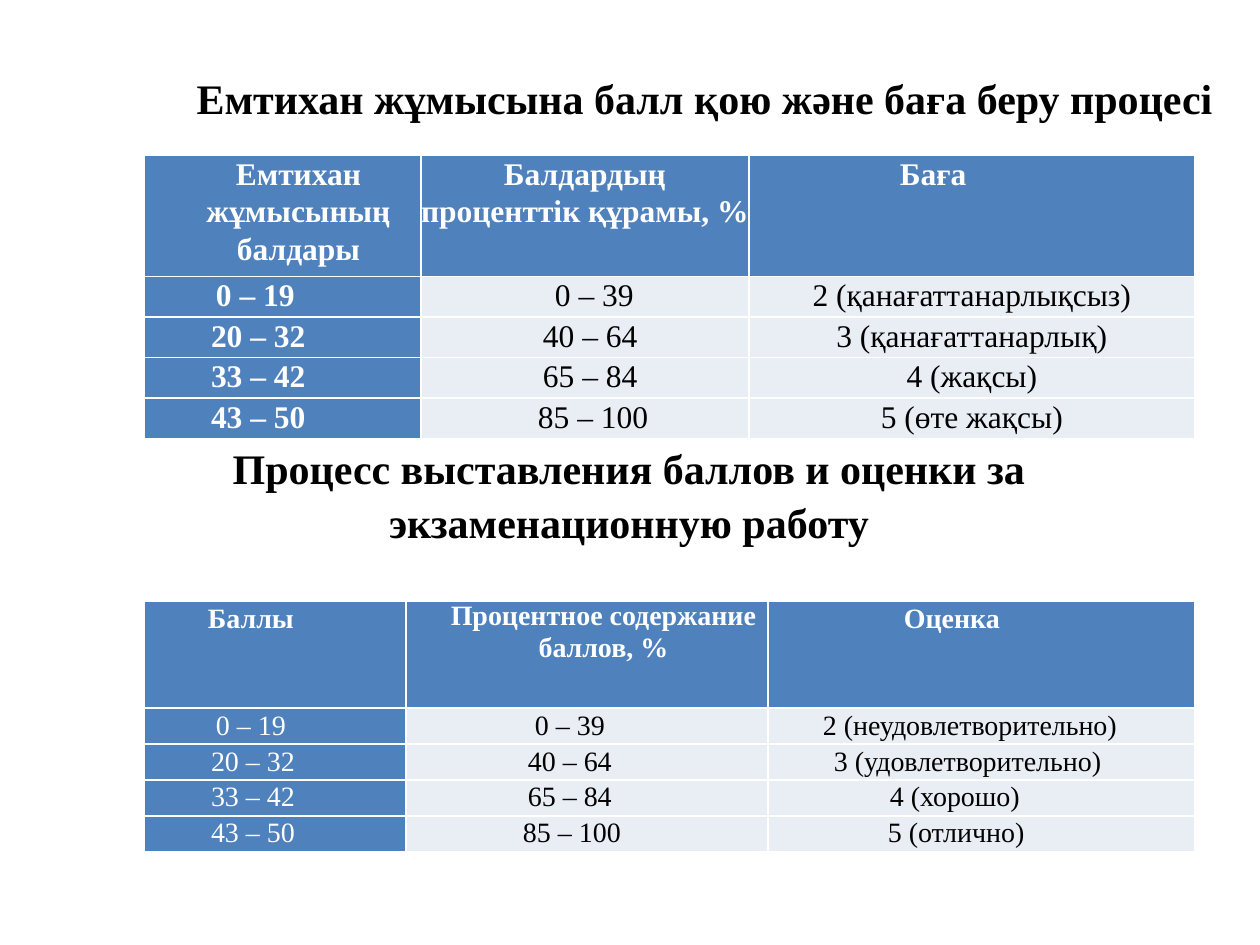
"""Builds a slide with two exam grading tables, in Kazakh and in Russian."""
from lxml import etree
from pptx import Presentation
from pptx import util as u
from pptx.dml.color import RGBColor
from pptx.enum import text as t
from pptx.oxml.ns import qn

PX = 914400 // 126
FONT = "Times New Roman"
BLACK = RGBColor(0, 0, 0)
WHITE = RGBColor(0xFF, 0xFF, 0xFF)
BLUE = RGBColor(0x4F, 0x81, 0xBD)
PALE = RGBColor(0xE9, 0xED, 0xF4)
LEFT, MID = t.PP_ALIGN.LEFT, t.PP_ALIGN.CENTER

SCORES = [("0 – 19", 72), ("20 – 32", 67), ("33 – 42", 67), ("43 – 50", 67)]
SHARES = [("40 – 64", 122), ("65 – 84", 122), ("85 – 100", 117)]
KAZAKH = {
    "head": [("Емтихан жұмысының балдары", 32, MID),
             ("Балдардың проценттік құрамы, %", 0, MID),
             ("Баға", 151, LEFT)],
    "zero": ("0 – 39", 134),
    "marks": [("2 (қанағаттанарлықсыз)", 0, MID), ("3 (қанағаттанарлық)", 0, MID),
              ("4 (жақсы)", 0, MID), ("5 (өте жақсы)", 0, MID)],
}
RUSSIAN = {
    "head": [("Баллы", 64, LEFT),
             ("Процентное содержание баллов, %", 33, MID, 1.0),
             ("Оценка", 136, LEFT)],
    "zero": ("0 – 39", 129),
    "marks": [("2 (неудовлетворительно)", 55), ("3 (удовлетворительно)", 66),
              ("4 (хорошо)", 122), ("5 (отлично)", 120)],
}


def write(frame, words, size=24, bold=True, color=BLACK, align=LEFT, indent=0, line=1.07):
    """Fill a text frame with one formatted paragraph."""
    para = frame.paragraphs[0]
    para.alignment = align
    para.line_spacing = line
    props = para._p.get_or_add_pPr()
    props.set("marL", str(indent * PX))
    props.set("indent", "0")
    run = para.add_run()
    run.text = words
    font = run.font
    font.name, font.size, font.bold = FONT, u.Pt(size), bold
    font.color.rgb = color


def edge(cell):
    """Draw thin white borders round a cell."""
    props = cell._tc.get_or_add_tcPr()
    for side in ("lnL", "lnR", "lnT", "lnB"):
        line = etree.SubElement(props, qn("a:" + side), w=str(u.Pt(1)))
        fill = etree.SubElement(line, qn("a:solidFill"))
        etree.SubElement(fill, qn("a:srgbClr"), val=str(WHITE))


def place(shape, left, top, width, height):
    """Set the position and size of a shape in px."""
    shape.left, shape.top = left * PX, top * PX
    shape.width, shape.height = width * PX, height * PX


def grid(slide, data, top, cols, rows, size, bold):
    """Add a grading table with a blue header row and first column."""
    body = zip(SCORES, [data["zero"]] + SHARES, data["marks"])
    lines = [data["head"], *body]
    table = slide.shapes.add_table(len(rows), len(cols), 144 * PX, top * PX,
                                   sum(cols) * PX, sum(rows) * PX).table
    for col, width in zip(table.columns, cols):
        col.width = width * PX
    for r, (height, items) in enumerate(zip(rows, lines)):
        table.rows[r].height = height * PX
        for c, (words, indent, *rest) in enumerate(items):
            cell = table.cell(r, c)
            cell.margin_left = cell.margin_right = 0
            cell.margin_top = cell.margin_bottom = 0
            edge(cell)
            dark = r == 0 or c == 0
            cell.fill.solid()
            cell.fill.fore_color.rgb = BLUE if dark else PALE
            align, line = (*rest, LEFT, 1.07)[:2] if not rest else (*rest, 1.07)[:2]
            write(cell.text_frame, words, size=size, indent=indent, align=align,
                  line=line, bold=r == 0 or (c == 0 and bold),
                  color=WHITE if dark else BLACK)


def title(slide, words):
    """Format the title placeholder as the upper heading."""
    shape = slide.shapes.title
    place(shape, 184, 66, 1052, 63)
    frame = shape.text_frame
    frame.word_wrap = False
    frame.auto_size = t.MSO_AUTO_SIZE.SHAPE_TO_FIT_TEXT
    frame.vertical_anchor = t.MSO_ANCHOR.TOP
    write(frame, words, line=1.0)


def label(slide, words):
    """Add the lower heading as a text box."""
    box = slide.shapes.add_textbox(0, 0, 0, 0)
    place(box, 44, 433, 1160, 122)
    box.text_frame.word_wrap = True
    write(box.text_frame, words, align=MID, indent=10)


def main():
    """Build and save the slide."""
    deck = Presentation()
    deck.slide_width, deck.slide_height = u.Inches(10), u.Inches(7.5)
    slide = deck.slides.add_slide(deck.slide_layouts[5])
    title(slide, "Емтихан жұмысына балл қою және баға беру процесі")
    grid(slide, KAZAKH, 155, [277, 328, 446], [112] + [37] * 4, 18, True)
    label(slide, "Процесс выставления баллов и оценки за экзаменационную работу")
    grid(slide, RUSSIAN, 601, [262, 362, 427], [107] + [36] * 4, 16, False)
    deck.save("out.pptx")


if __name__ == "__main__":
    main()
